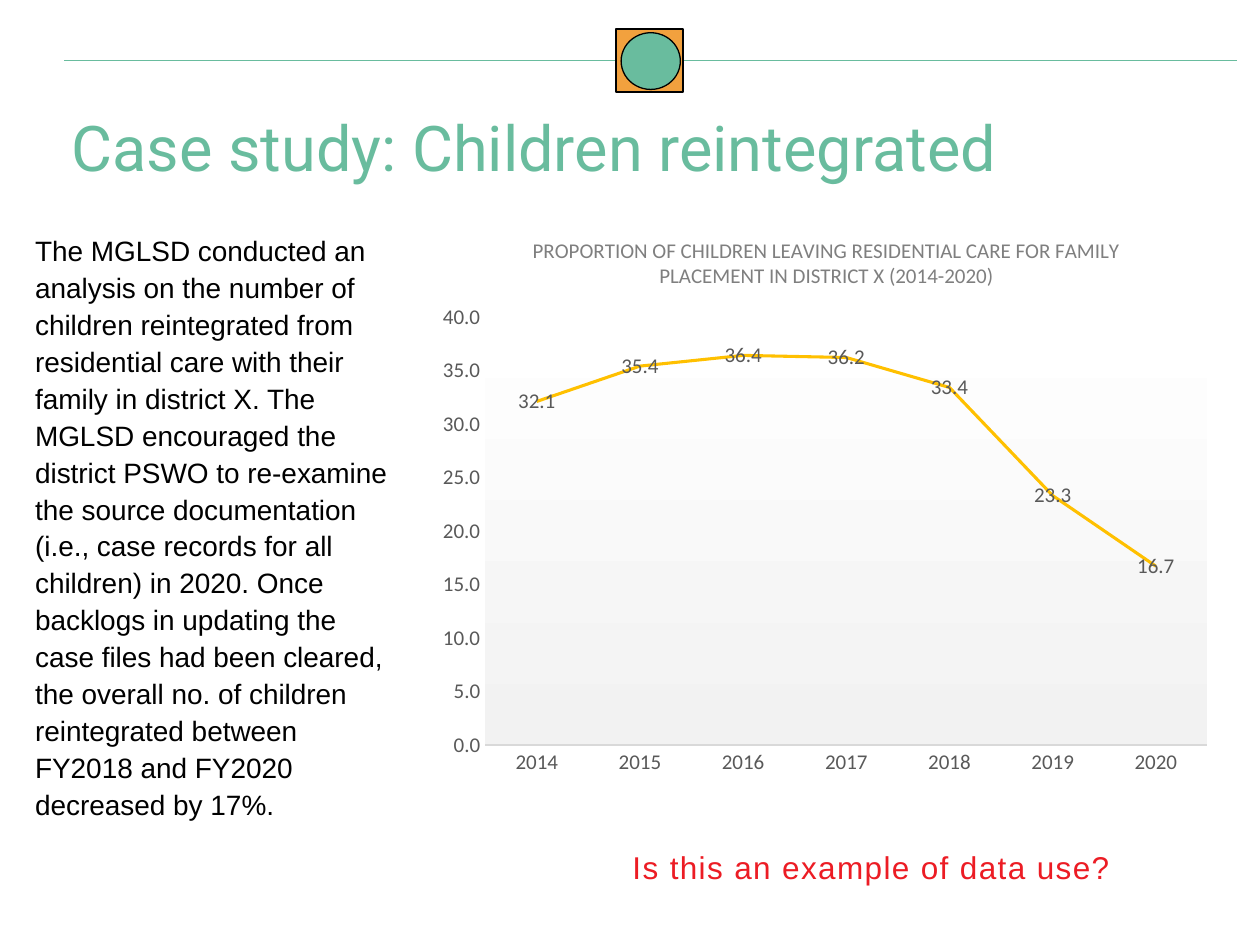
from lxml import etree
from pptx import Presentation
from pptx.chart.data import CategoryChartData
from pptx.dml.color import RGBColor
from pptx.enum.chart import XL_CHART_TYPE, XL_LABEL_POSITION, XL_TICK_MARK
from pptx.enum.shapes import MSO_CONNECTOR, MSO_SHAPE
from pptx.oxml import parse_xml
from pptx.oxml.ns import nsdecls, qn
from pptx.util import Inches, Pt

LINE = XL_CHART_TYPE.LINE
CENTER = XL_LABEL_POSITION.CENTER
NO_TICK = XL_TICK_MARK.NONE
STRAIGHT = MSO_CONNECTOR.STRAIGHT
RECT, OVAL = MSO_SHAPE.RECTANGLE, MSO_SHAPE.OVAL

GREEN = RGBColor(0x69, 0xBC, 0x9E)
ORANGE = RGBColor(0xF2, 0xA1, 0x3E)
BLACK = RGBColor(0, 0, 0)
RED = RGBColor(0xEC, 0x1C, 0x24)
GOLD = RGBColor(0xFF, 0xC0, 0x00)
DARK = RGBColor(0x59, 0x59, 0x59)
GRAY = RGBColor(0x7F, 0x7F, 0x7F)
PALE = RGBColor(0xD9, 0xD9, 0xD9)

# Content
TITLE = "Case study: Children reintegrated"
STORY = (
    "The MGLSD conducted an analysis on the number of children reintegrated "
    "from residential care with their family in district X. The MGLSD "
    "encouraged the district PSWO to re-examine the source documentation "
    "(i.e., case records for all children) in 2020. Once backlogs in updating "
    "the case files had been cleared, the overall no. of children reintegrated "
    "between FY2018 and FY2020 decreased by 17%."
)
ASK = "Is this an example of data use?"
HEAD = ("PROPORTION OF CHILDREN LEAVING RESIDENTIAL CARE FOR FAMILY "
        "PLACEMENT IN DISTRICT X (2014-2020)")
RATES = {"2014": 32.1, "2015": 35.4, "2016": 36.4, "2017": 36.2,
         "2018": 33.4, "2019": 23.3, "2020": 16.7}
BADGE = [
    (RECT, (4.89, 0.23, 0.53, 0.5), ORANGE, 1),
    (OVAL, (4.93, 0.26, 0.47, 0.45), GREEN, 0.75),
]
PLOT = {"x": 0.07, "y": 0.18, "w": 0.91, "h": 0.75}  # shares of the chart


def set_font(font, size, color, name="Calibri"):
    font.size, font.name, font.bold = Pt(size), name, False
    font.color.rgb = color


def add_text(slide, text, box, size, color, name="Arial", lead=0.9,
             inset=(0.1, 0.05), track=0):
    frame = slide.shapes.add_textbox(*map(Inches, box)).text_frame
    frame.word_wrap = True
    frame.margin_left = frame.margin_right = Inches(inset[0])
    frame.margin_top = frame.margin_bottom = Inches(inset[1])
    para = frame.paragraphs[0]
    para.line_spacing = lead
    run = para.add_run()
    run.text = text
    set_font(run.font, size, color, name)
    if track:
        run.font._element.set("spc", str(int(track * 100)))


def add_badge(slide):
    rule = slide.shapes.add_connector(
        STRAIGHT, *map(Inches, (0.51, 0.48, 9.82, 0.48)))
    rule.line.color.rgb, rule.line.width = GREEN, Pt(0.75)
    etree.SubElement(rule._element.spPr, qn("a:effectLst"))
    for kind, box, fill, width in BADGE:
        shape = slide.shapes.add_shape(kind, *map(Inches, box))
        shape.shadow.inherit = False
        shape.fill.solid()
        shape.fill.fore_color.rgb = fill
        shape.line.color.rgb, shape.line.width = BLACK, Pt(width)


def style_areas(chart):
    """White chart area, fixed plot position and a gradient plot fill."""
    root = chart.element.find(qn("c:chart"))
    area = root.find(qn("c:plotArea"))
    for old in area.findall(qn("c:layout")):
        area.remove(old)
    spots = "".join(f'<c:{key} val="{val}"/>' for key, val in PLOT.items())
    area.insert(0, parse_xml(
        f'<c:layout {nsdecls("c")}><c:manualLayout>'
        '<c:layoutTarget val="inner"/><c:xMode val="edge"/>'
        f'<c:yMode val="edge"/>{spots}</c:manualLayout></c:layout>'))
    stops = "".join(
        f'<a:gs pos="{pos}"><a:srgbClr val="{color}"/></a:gs>'
        for pos, color in ((0, "FFFFFF"), (100000, "F2F2F2")))
    area.append(parse_xml(
        f'<c:spPr {nsdecls("c", "a")}><a:gradFill><a:gsLst>{stops}</a:gsLst>'
        '<a:lin ang="5400000" scaled="0"/></a:gradFill></c:spPr>'))
    root.addnext(parse_xml(
        f'<c:spPr {nsdecls("c", "a")}><a:solidFill><a:srgbClr val="FFFFFF"/>'
        '</a:solidFill><a:ln><a:noFill/></a:ln></c:spPr>'))


def add_rates(slide):
    data = CategoryChartData(number_format="0.0")
    data.categories = list(RATES)
    data.add_series("Series 1", list(RATES.values()))
    box = map(Inches, (3.41, 1.7, 6.3, 4.53))
    chart = slide.shapes.add_chart(LINE, *box, data).chart
    set_font(chart.font, 10, BLACK)
    chart.has_legend = False

    # Heading
    chart.has_title = True
    chart.chart_title.include_in_layout = False
    para = chart.chart_title.text_frame.paragraphs[0]
    run = para.add_run()
    run.text = HEAD
    set_font(run.font, 12, GRAY)

    # Axes
    years, scale = chart.category_axis, chart.value_axis
    for axis in (years, scale):
        axis.has_major_gridlines = False
        axis.major_tick_mark = axis.minor_tick_mark = NO_TICK
        set_font(axis.tick_labels.font, 12, DARK)
    years.format.line.color.rgb = PALE
    years.format.line.width = Pt(0.75)
    scale.format.line.fill.background()
    scale.minimum_scale, scale.maximum_scale = 0, 40
    scale.major_unit = 5
    scale.tick_labels.number_format = "0.0"
    scale.tick_labels.number_format_is_linked = False

    # Line and its labels
    plot = chart.plots[0]
    plot.vary_by_categories = False
    series = plot.series[0]
    series.smooth = False
    series.format.line.color.rgb = GOLD
    series.format.line.width = Pt(1.75)
    labels = series.data_labels
    labels.show_value, labels.position = True, CENTER
    labels.number_format, labels.number_format_is_linked = "0.0", False
    set_font(labels.font, 12, DARK)
    style_areas(chart)


def main():
    deck = Presentation()
    deck.slide_width, deck.slide_height = Inches(10), Inches(7.5)
    slide = deck.slides.add_slide(deck.slide_layouts[6])
    add_badge(slide)
    add_text(slide, TITLE, (0.47, 0.88, 8.94, 0.92), 36, GREEN, name="Roboto")
    add_text(slide, STORY, (0.18, 1.78, 3.05, 4.3), 16, BLACK, lead=1.1)
    add_text(slide, ASK, (4.95, 6.72, 4.16, 0.39), 18, RED,
             inset=(0.07, 0.04), track=0.8)
    add_rates(slide)
    deck.save("out.pptx")


if __name__ == "__main__":
    main()
